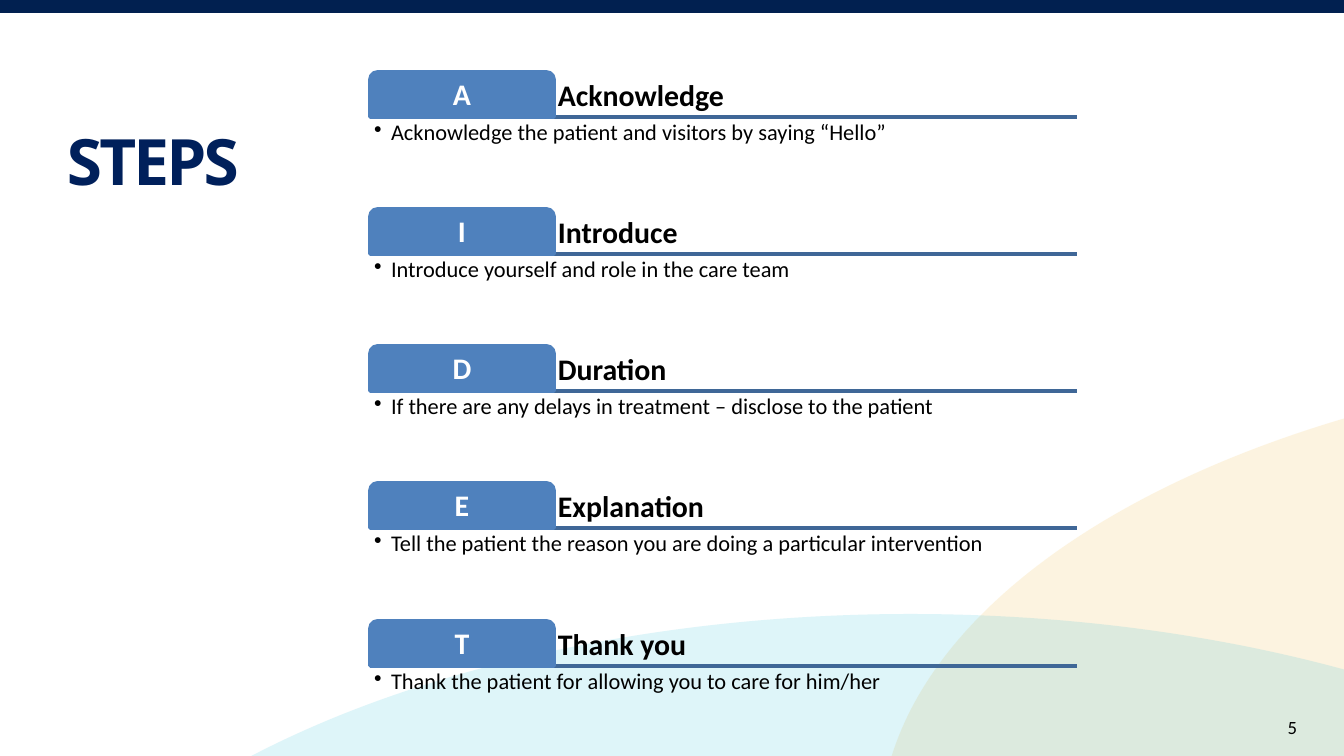
"""Build the STEPS slide: five lettered steps, each with a heading and an explanation."""
from lxml.etree import SubElement
from pptx import Presentation
from pptx.dml.color import RGBColor as RGB
from pptx.enum.shapes import MSO_CONNECTOR as LINK, MSO_SHAPE as SHAPE
from pptx.enum.text import MSO_ANCHOR as ANCHOR, MSO_AUTO_SIZE as FIT, PP_ALIGN as ALIGN
from pptx.oxml.ns import qn
from pptx.util import Pt

PX = 914400 / 134.4
COLORS = {
    "navy": "012050", "title": "00205B", "gold": "F1B434", "aqua": "26BCD7",
    "tab": "4F81BD", "rule": "3F6797", "black": "000000", "white": "FFFFFF",
}
STEPS = [
    ("A", "Acknowledge", "Acknowledge the patient and visitors by saying “Hello”"),
    ("I", "Introduce", "Introduce yourself and role in the care team"),
    ("D", "Duration", "If there are any delays in treatment – disclose to the patient"),
    ("E", "Explanation", "Tell the patient the reason you are doing a particular intervention"),
    ("T", "Thank you", "Thank the patient for allowing you to care for him/her"),
]

deck = Presentation()
deck.slide_width, deck.slide_height = round(1344 * PX), round(756 * PX)
slide = deck.slides.add_slide(deck.slide_layouts[5])
shapes = slide.shapes


def add_block(preset, box, color, opacity=100):
    block = shapes.add_shape(preset, *[round(n * PX) for n in box])
    block.shadow.inherit = False
    block.fill.solid()
    block.fill.fore_color.rgb = RGB.from_string(COLORS[color])
    block.line.fill.background()
    if opacity < 100:
        tint = block.fill._xPr.find(qn("a:solidFill"))[0]
        SubElement(tint, qn("a:alpha"), val=str(opacity * 1000))
    return block


def add_text(text, box, size, color="black", bold=False, align=ALIGN.LEFT,
             anchor=ANCHOR.TOP, inset=4, bullet=False):
    frame = shapes.add_textbox(*[round(n * PX) for n in box]).text_frame
    frame.word_wrap = True
    frame.vertical_anchor = anchor
    frame.margin_left = frame.margin_right = round(inset * PX)
    frame.margin_top = frame.margin_bottom = round(4 * PX)
    frame.text = text
    line = frame.paragraphs[0]
    line.alignment = align
    line.line_spacing = 0.9
    if bullet:
        layout = line._p.get_or_add_pPr()
        layout.set("marL", str(round(17 * PX)))
        layout.set("indent", str(round(-17 * PX)))
        SubElement(layout, qn("a:buChar"), char="•")
    font = line.runs[0].font
    font.name, font.size, font.bold = "Calibri", Pt(size), bold
    font.color.rgb = RGB.from_string(COLORS[color])


add_block(SHAPE.RECTANGLE, (0, 0, 1344, 13), "navy")
for hill_box, hill_color in [((880, 355, 1851, 953), "gold"), ((-15, 614, 1851, 953), "aqua")]:
    add_block(SHAPE.OVAL, hill_box, hill_color, 15).rotation = 180
add_text("5", (1236, 711, 74, 36), 10, align=ALIGN.RIGHT, anchor=ANCHOR.MIDDLE, inset=13)

title = shapes.title
title.left, title.top, title.width, title.height = [round(n * PX) for n in (67, 120, 1210, 79)]
heading = title.text_frame
heading.text = "STEPS"
heading.auto_size = FIT.NONE
heading.vertical_anchor = ANCHOR.MIDDLE
heading.margin_left = heading.margin_right = heading.margin_top = heading.margin_bottom = 0
heading.paragraphs[0].alignment = ALIGN.LEFT
acronym = heading.paragraphs[0].runs[0]
acronym.font.name, acronym.font.size, acronym.font.bold = "Noto Sans", Pt(34.2), True
acronym.font.color.rgb = RGB.from_string(COLORS["title"])
acronym._r.get_or_add_rPr().set("spc", "-150")

for row, (letter, step, advice) in enumerate(STEPS):
    base = 117 + row * 549 // 4
    rule = shapes.add_connector(LINK.STRAIGHT, *[round(n * PX) for n in (370, base, 1077, base)])
    rule.line.color.rgb = RGB.from_string(COLORS["rule"])
    rule.line.width = Pt(2)
    SubElement(rule._element.spPr, qn("a:effectLst"))

    add_text(step, (554, base - 45, 523, 45), 16, bold=True, anchor=ANCHOR.BOTTOM)
    tab = add_block(SHAPE.ROUND_2_SAME_RECTANGLE, (370, base - 45, 184, 45), "tab")
    tab.adjustments[0], tab.adjustments[1] = 0.17, 0
    tab.line.color.rgb = RGB.from_string(COLORS["tab"])
    tab.line.width = Pt(2)
    add_text(letter, (372, base - 43, 180, 43), 16, "white", True, ALIGN.CENTER, ANCHOR.MIDDLE)
    add_text(advice, (370, base, 707, 90), 12, bullet=True)

deck.save("out.pptx")
